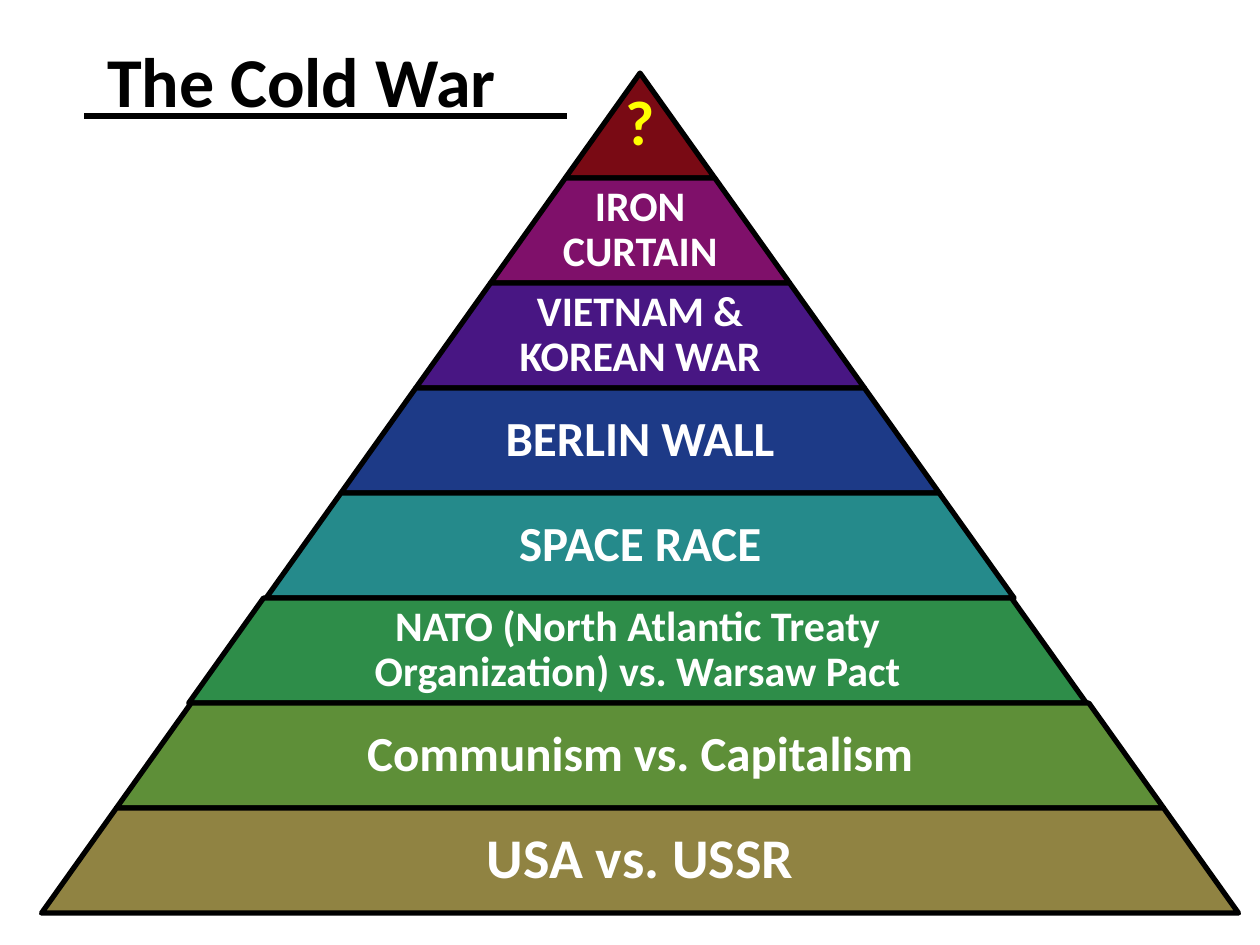
from dataclasses import dataclass

from lxml import etree
from pptx import Presentation
from pptx.dml.color import RGBColor
from pptx.enum.shapes import MSO_CONNECTOR, MSO_SHAPE
from pptx.enum.text import MSO_ANCHOR, MSO_AUTO_SIZE, PP_ALIGN
from pptx.oxml.ns import qn
from pptx.util import Inches, Pt

TRAPEZOID = MSO_SHAPE.TRAPEZOID
STRAIGHT = MSO_CONNECTOR.STRAIGHT
MIDDLE, TOP = MSO_ANCHOR.MIDDLE, MSO_ANCHOR.TOP
CENTER, LEFT = PP_ALIGN.CENTER, PP_ALIGN.LEFT
FIXED_SIZE = MSO_AUTO_SIZE.NONE
TITLE_ONLY = 5


@dataclass(frozen=True)
class Theme:
    """Colours, font and sizes used across the slide."""

    font: str = "Calibri"
    ink: str = "000000"
    light: str = "FFFFFF"
    accent: str = "FFFF00"
    title: int = 40
    mark: int = 36
    base: int = 32
    large: int = 28
    small: int = 24
    stroke: int = 3


THEME = Theme()
APEX_X, APEX_Y = 5.08, 0.58
TIER_HEIGHT = 7.5 / 9
TIER_GROWTH = 9.5 / 8
LABEL_SHARE = 0.65
SLOPE = TIER_GROWTH / 2 / TIER_HEIGHT

TIERS = [
    ("?", "790A14", THEME.mark, 0.05),
    ("IRON CURTAIN", "7F106A", THEME.small, 0.03),
    ("VIETNAM & KOREAN WAR", "481683", THEME.small, 0.03),
    ("BERLIN WALL", "1D3A87", THEME.large, 0.04),
    ("SPACE RACE", "258A8B", THEME.large, 0.04),
    ("NATO (North Atlantic Treaty Organization) vs. Warsaw Pact", "2E8D49", THEME.small, 0.03),
    ("Communism vs. Capitalism", "5E8F38", THEME.large, 0.04),
    ("USA vs. USSR", "908342", THEME.base, 0.04),
]
TIER_SHIFTS = {6: -0.02}


def style_text(para, size, color, align):
    """Format a paragraph and its runs in the bold slide font."""
    para.alignment = align
    for span in para.runs:
        span.font.name = THEME.font
        span.font.size = Pt(size)
        span.font.bold = True
        span.font.color.rgb = RGBColor.from_string(color)


def style_line(line):
    """Apply the slide's heavy dark stroke."""
    line.color.rgb = RGBColor.from_string(THEME.ink)
    line.width = Pt(THEME.stroke)


def add_tier_shape(pyramid, center, top, width, color):
    """Draw one slice of the pyramid."""
    tier = pyramid.shapes.add_shape(
        TRAPEZOID, Inches(center - width / 2), Inches(top), Inches(width), Inches(TIER_HEIGHT)
    )
    tier.adjustments[0] = SLOPE
    tier.shadow.inherit = False
    tier.fill.solid()
    tier.fill.fore_color.rgb = RGBColor.from_string(color)
    style_line(tier.line)


def add_label(pyramid, center, top, width, text, size, color, inset):
    """Place a centred label over a slice."""
    box = pyramid.shapes.add_textbox(
        Inches(center - width / 2), Inches(top), Inches(width), Inches(TIER_HEIGHT)
    )
    frame = box.text_frame
    frame.word_wrap = True
    frame.vertical_anchor = MIDDLE
    frame.margin_left = frame.margin_right = Inches(inset)
    frame.margin_top = frame.margin_bottom = Inches(inset)
    frame.text = text
    para = frame.paragraphs[0]
    para.line_spacing = 0.9
    style_text(para, size, color, CENTER)


def add_pyramid(page):
    """Stack the tiers from apex to base in one group."""
    pyramid = page.shapes.add_group_shape()
    for number, (text, fill, size, inset) in enumerate(TIERS, start=1):
        center = APEX_X + TIER_SHIFTS.get(number, 0)
        top = APEX_Y + (number - 1) * TIER_HEIGHT
        width = number * TIER_GROWTH
        is_apex = number == 1
        label_width = width if is_apex else width * LABEL_SHARE
        color = THEME.accent if is_apex else THEME.light
        add_tier_shape(pyramid, center, top, width, fill)
        add_label(pyramid, center, top, label_width, text, size, color, inset)


def set_title(page, text):
    """Move and format the title placeholder."""
    title = page.shapes.title
    title.left, title.top = Inches(0.75), Inches(0.25)
    title.width, title.height = Inches(3.58), Inches(0.77)
    frame = title.text_frame
    frame.text = text
    frame.word_wrap = True
    frame.auto_size = FIXED_SIZE
    frame.vertical_anchor = TOP
    style_text(frame.paragraphs[0], THEME.title, THEME.ink, LEFT)


def add_rule(page, left, right, y):
    """Draw a horizontal rule without a shadow."""
    rule = page.shapes.add_connector(STRAIGHT, Inches(left), Inches(y), Inches(right), Inches(y))
    style_line(rule.line)
    etree.SubElement(rule._element.spPr, qn("a:effectLst"))


def main():
    """Build the pyramid slide and save the deck."""
    deck = Presentation()
    deck.slide_width, deck.slide_height = Inches(10), Inches(7.5)
    page = deck.slides.add_slide(deck.slide_layouts[TITLE_ONLY])
    add_pyramid(page)
    set_title(page, "The Cold War")
    add_rule(page, 0.67, 4.5, 0.92)
    deck.save("out.pptx")


if __name__ == "__main__":
    main()
